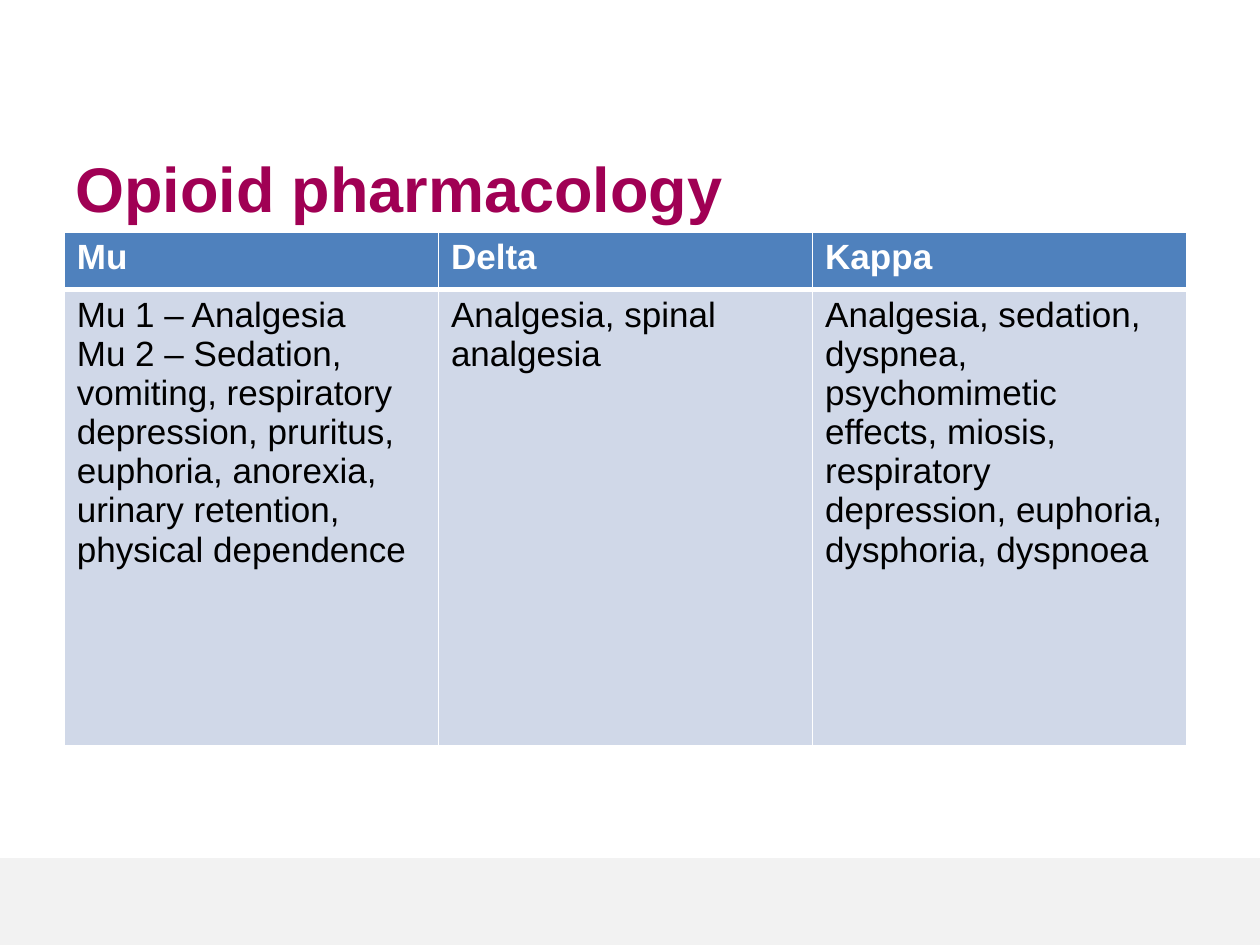
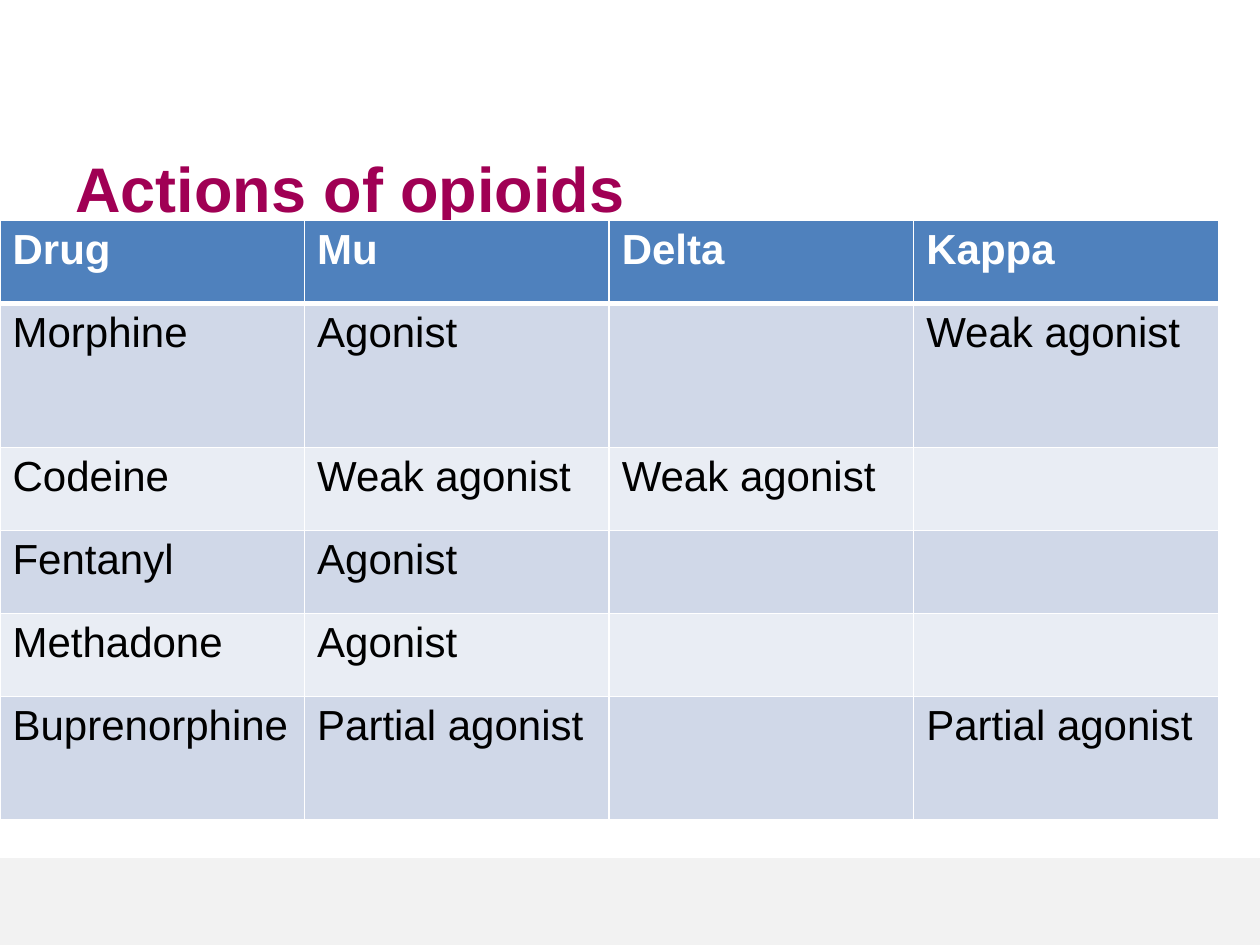
import pptx
import pptx.dml.color
import pptx.enum.shapes
import pptx.enum.text
import pptx.oxml
import pptx.oxml.ns
import pptx.util
from pptx.util import Inches

FONT = "Arial"
COLORS = {
    "title": "A00054",
    "footer": "F2F2F2",
    "header": "4F81BD",
    "band_dark": "D0D8E8",
    "band_light": "E9EDF4",
    "white": "FFFFFF",
    "text": "000000",
}


def rgb(name):
    return pptx.dml.color.RGBColor.from_string(COLORS[name])


class Deck:
    """Shared style and the current slide."""

    def __init__(self):
        self.prs = pptx.Presentation()
        self.prs.slide_width = Inches(10)
        self.prs.slide_height = Inches(7.5)
        self.s = None

    def slide(self, title):
        self.s = self.prs.slides.add_slide(self.prs.slide_layouts[6])
        self.footer()
        self.title(title)

    def footer(self):
        sp = self.s.shapes.add_shape(
            pptx.enum.shapes.MSO_SHAPE.RECTANGLE,
            0, Inches(6.81), Inches(10), Inches(0.69))
        sp.shadow.inherit = False
        sp.fill.solid()
        sp.fill.fore_color.rgb = rgb("footer")
        sp.line.fill.background()

    def title(self, text):
        sp = self.s.shapes.add_textbox(
            Inches(0.5), Inches(1.12), Inches(8.5), Inches(0.74))
        tf = sp.text_frame
        tf.word_wrap = True
        tf.vertical_anchor = pptx.enum.text.MSO_ANCHOR.MIDDLE
        tf.text = text
        self.font(tf.paragraphs[0], 36, "title", True)

    def font(self, p, size, color, bold=False):
        p.font.name = FONT
        p.font.size = pptx.util.Pt(size)
        p.font.bold = bold
        p.font.color.rgb = rgb(color)

    def borders(self, cell, bottom):
        """White cell borders, 1 pt except for the bottom one."""
        tc_pr = cell._tc.get_or_add_tcPr()
        widths = {"lnL": 1, "lnR": 1, "lnT": 1, "lnB": bottom}
        for i, (tag, width) in enumerate(widths.items()):
            tc_pr.insert(i, pptx.oxml.parse_xml(
                f'<a:{tag} {pptx.oxml.ns.nsdecls("a")} w="{pptx.util.Pt(width)}">'
                f'<a:solidFill><a:srgbClr val="{COLORS["white"]}"/></a:solidFill>'
                f'</a:{tag}>'))

    def table(self, left, top, width, heights, rows, size):
        n_cols = len(rows[0])
        table = self.s.shapes.add_table(
            len(rows), n_cols, Inches(left), Inches(top),
            Inches(width), Inches(sum(heights))).table
        for col in table.columns:
            col.width = Inches(width / n_cols)
        for i, (height, texts) in enumerate(zip(heights, rows)):
            table.rows[i].height = Inches(height)
            header = i == 0
            fill = "header" if header else "band_dark" if i % 2 else "band_light"
            for j, text in enumerate(texts):
                cell = table.cell(i, j)
                cell.fill.solid()
                cell.fill.fore_color.rgb = rgb(fill)
                self.borders(cell, 3 if header else 1)
                cell.text = text
                for p in cell.text_frame.paragraphs:
                    self.font(p, size, "white" if header else "text", header)


def main():
    deck = Deck()

    # Receptor effects
    deck.slide("Opioid pharmacology")
    deck.table(0.51, 1.84, 8.91, [0.46, 3.62], [
        ["Mu", "Delta", "Kappa"],
        ["Mu 1 – Analgesia\n"
         "Mu 2 – Sedation, vomiting, respiratory depression, pruritus, "
         "euphoria, anorexia, urinary retention, physical dependence",
         "Analgesia, spinal analgesia",
         "Analgesia, sedation, dyspnea, psychomimetic effects, miosis, "
         "respiratory depression, euphoria, dysphoria, dyspnoea"],
    ], 20)

    # Drug actions by receptor
    deck.slide("Actions of opioids")
    deck.table(0, 1.75, 9.67, [0.66, 1.14, 0.66, 0.66, 0.66, 0.98], [
        ["Drug", "Mu", "Delta", "Kappa"],
        ["Morphine", "Agonist", "", "Weak agonist"],
        ["Codeine", "Weak agonist", "Weak agonist", ""],
        ["Fentanyl", "Agonist", "", ""],
        ["Methadone", "Agonist", "", ""],
        ["Buprenorphine", "Partial agonist", "", "Partial agonist"],
    ], 24)

    deck.prs.save("out.pptx")


if __name__ == "__main__":
    main()
